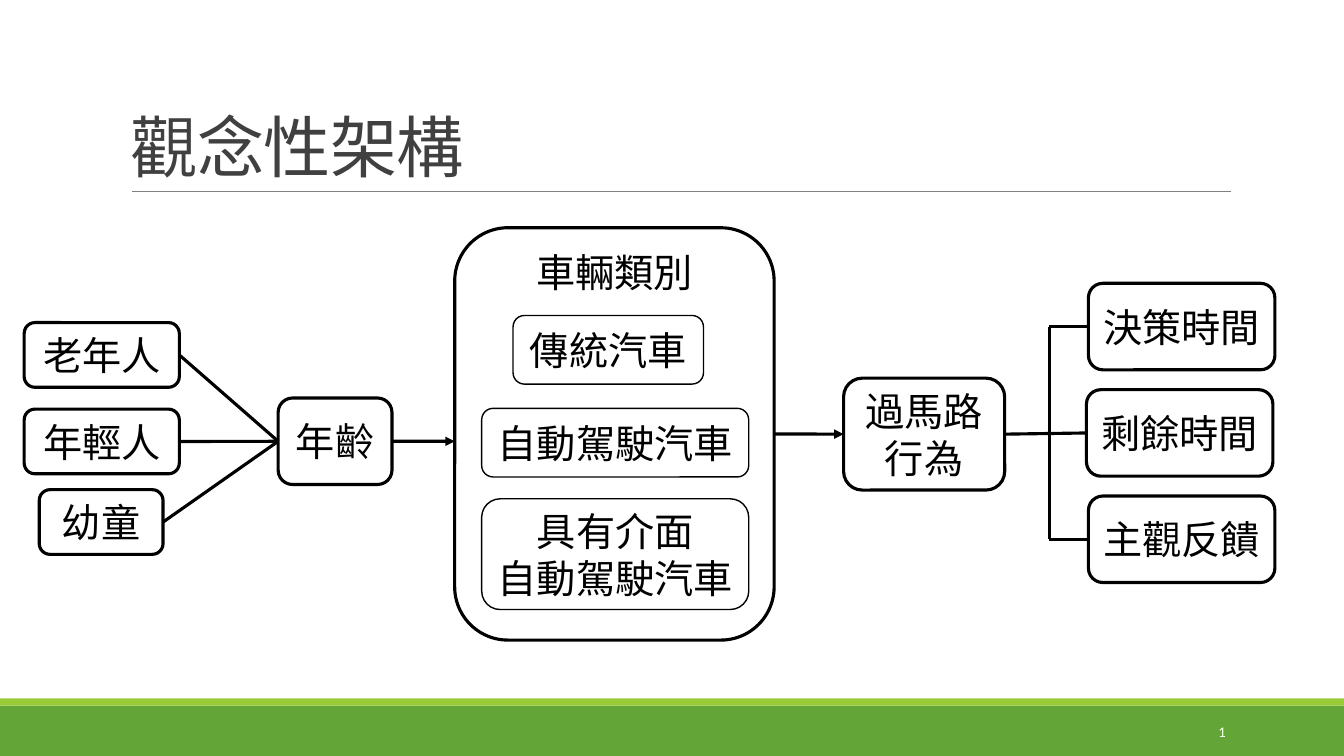
"""Build the conceptual framework slide."""
from lxml import etree
from pptx import Presentation
from pptx.dml.color import RGBColor
from pptx.enum.shapes import MSO_CONNECTOR, MSO_SHAPE
from pptx.enum.text import MSO_ANCHOR, PP_ALIGN
from pptx.oxml.ns import qn
from pptx.util import Cm, Pt

RECT, ROUND = MSO_SHAPE.RECTANGLE, MSO_SHAPE.ROUNDED_RECTANGLE
STRAIGHT = MSO_CONNECTOR.STRAIGHT
TOP, MIDDLE, BOTTOM = MSO_ANCHOR.TOP, MSO_ANCHOR.MIDDLE, MSO_ANCHOR.BOTTOM
LEFT, CENTER, RIGHT = PP_ALIGN.LEFT, PP_ALIGN.CENTER, PP_ALIGN.RIGHT
LEFT_SIDE, RIGHT_SIDE = 1, 3
COLORS = {"green": "63A537", "lime": "99CB38", "rule": "808080",
          "title": "404040", "ink": "000000", "white": "FFFFFF"}


class Deck:
    font = "Calibri"
    thick, thin = 2.25, 1

    def __init__(self, prs):
        self.s = prs.slides.add_slide(prs.slide_layouts[6])

    def color(self, name):
        return RGBColor.from_string(COLORS[name])

    def fill_text(self, tf, text, size, color, align, anchor):
        tf.text = text
        tf.word_wrap = True
        tf.vertical_anchor = anchor
        for p in tf.paragraphs:
            p.alignment = align
            for r in p.runs:
                r.font.name = self.font
                r.font.size = Pt(size)
                r.font.color.rgb = self.color(color)

    def bar(self, x, y, w, h, fill):
        sp = self.s.shapes.add_shape(RECT, Cm(x), Cm(y), Cm(w), Cm(h))
        sp.shadow.inherit = False
        sp.fill.solid()
        sp.fill.fore_color.rgb = self.color(fill)
        sp.line.fill.background()

    def box(self, text, x, y, w, h, width=thick, anchor=MIDDLE):
        sp = self.s.shapes.add_shape(ROUND, Cm(x), Cm(y), Cm(w), Cm(h))
        sp.shadow.inherit = False
        sp.fill.background()
        sp.line.color.rgb = self.color("ink")
        sp.line.width = Pt(width)
        sp.text_frame.margin_left = sp.text_frame.margin_right = Cm(0.2)
        self.fill_text(sp.text_frame, text, 28, "ink", CENTER, anchor)
        return sp

    def text(self, text, x, y, w, h, size, color, align, anchor):
        sp = self.s.shapes.add_textbox(Cm(x), Cm(y), Cm(w), Cm(h))
        self.fill_text(sp.text_frame, text, size, color, align, anchor)
        return sp.text_frame.paragraphs[0]

    def line(self, x1, y1, x2, y2, start=None, end=None, arrow=False,
             color="ink", width=thick):
        c = self.s.shapes.add_connector(STRAIGHT, Cm(x1), Cm(y1), Cm(x2), Cm(y2))
        if start is not None:
            c.begin_connect(start, RIGHT_SIDE)
        if end is not None:
            c.end_connect(end, LEFT_SIDE)
        c.line.color.rgb = self.color(color)
        c.line.width = Pt(width)
        if arrow:
            etree.SubElement(c.line._get_or_add_ln(), qn("a:tailEnd"), type="triangle")
        etree.SubElement(c._element.spPr, qn("a:effectLst"))


def main():
    prs = Presentation()
    prs.slide_width, prs.slide_height = Cm(33.87), Cm(19.05)
    deck = Deck(prs)

    deck.bar(0, 17.78, 33.87, 1.27, "green")
    deck.bar(0, 17.6, 33.87, 0.18, "lime")
    deck.line(3.33, 4.83, 31.01, 4.83, color="rule", width=0.5)
    p = deck.text("觀念性架構", 3.05, 0.79, 27.94, 4.04, 48, "title", LEFT, BOTTOM)
    p.line_spacing = 0.85
    p.runs[0]._r.get_or_add_rPr().set("spc", "-50")
    deck.text("1", 27.51, 17.93, 3.63, 1.02, 10.5, "white", RIGHT, MIDDLE)

    age = deck.box("年齡", 7.01, 10.03, 2.87, 2.18)
    for name, x, y, w in (("老年人", 0.61, 8.13, 3.91),
                          ("年輕人", 0.61, 10.31, 3.91),
                          ("幼童", 0.99, 12.34, 3.12)):
        group = deck.box(name, x, y, w, 1.63)
        deck.line(x + w, y, 7.01, 11.12, group, age)

    vehicles = deck.box("車輛類別", 11.46, 5.74, 8.05, 10.39, anchor=TOP)
    for name, x, y, w, h in (("傳統汽車", 12.93, 7.95, 4.8, 1.73),
                             ("自動駕駛汽車", 12.14, 10.29, 6.73, 1.73),
                             ("具有介面\n自動駕駛汽車", 12.14, 12.57, 6.73, 2.79)):
        deck.box(name, x, y, w, h, deck.thin)
    deck.line(9.88, 11.12, 11.46, 11.12, age, arrow=True)

    crossing = deck.box("過馬路行為", 21.26, 9.53, 4.06, 2.82)
    deck.line(19.51, 10.93, 21.26, 10.93, vehicles, crossing, arrow=True)

    top, pitch, height, branch = 7.14, 2.68, 2.18, 26.44
    first = top + height / 2
    deck.line(branch, first, branch, first + 2 * pitch)
    for i, (name, x) in enumerate((("決策時間", 27.43), ("剩餘時間", 27.38),
                                   ("主觀反饋", 27.43))):
        outcome = deck.box(name, x, top + i * pitch, 4.7, height)
        y = first + i * pitch
        deck.line(branch, y, x, y, crossing if i == 1 else None, outcome)

    prs.save("out.pptx")


if __name__ == "__main__":
    main()
